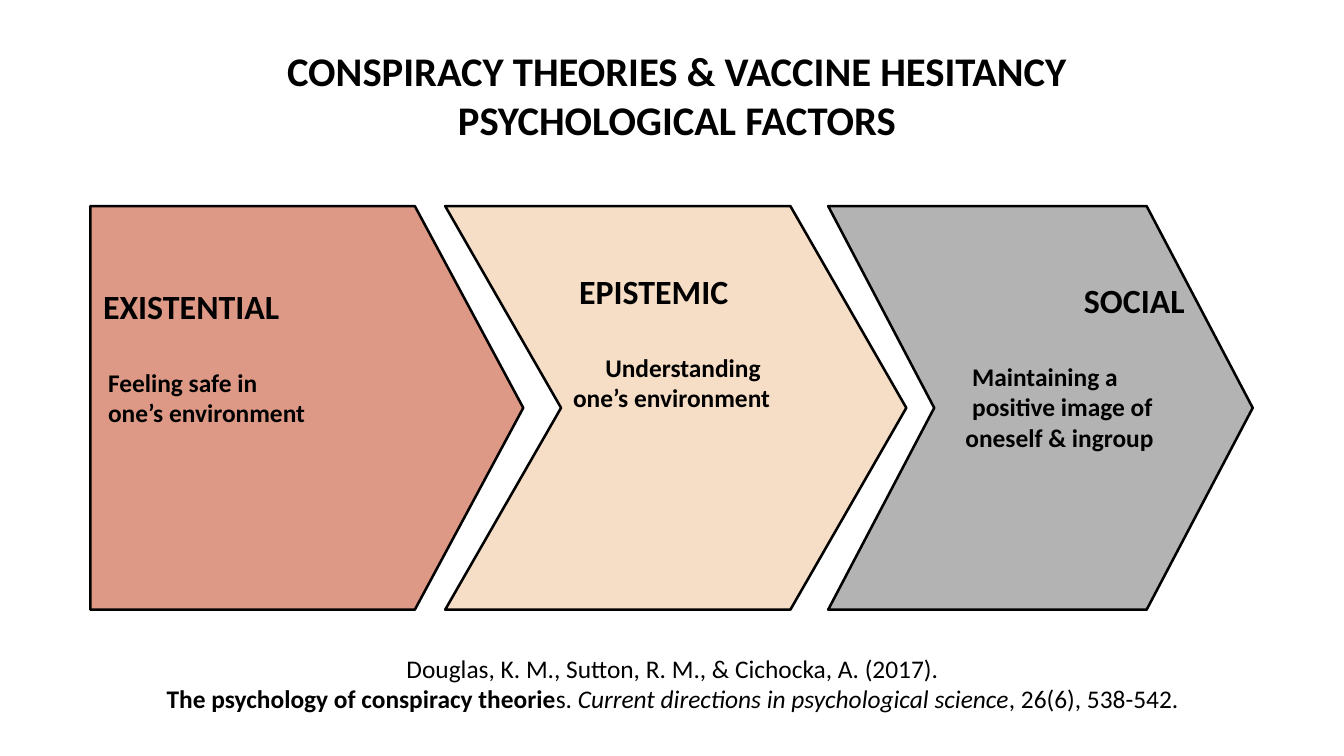
"""Build a slide on the psychological factors behind vaccine hesitancy."""
from pptx import Presentation
from pptx.dml.color import RGBColor
from pptx.enum.text import MSO_ANCHOR, MSO_AUTO_SIZE, PP_ALIGN
from pptx.util import Pt

COLORS = {
    "black": "000000",
    "existential": "DE9986",
    "epistemic": "F6DDC5",
    "social": "B3B3B3",
}
TOP, HEIGHT = 121.7, 238.3


def rgb(name):
    return RGBColor.from_string(COLORS[name])


def style(p, size, bold):
    for r in p.runs:
        r.font.name = "Calibri"
        r.font.size = Pt(size)
        r.font.bold = bold
        r.font.color.rgb = rgb("black")


prs = Presentation()
prs.slide_width, prs.slide_height = Pt(793.4), Pt(446.4)
s = prs.slides.add_slide(prs.slide_layouts[5])

title = s.shapes.title
title.left, title.top, title.width, title.height = Pt(14.4), Pt(6.5), Pt(770.4), Pt(98.6)
tf = title.text_frame
tf.text = "CONSPIRACY THEORIES & VACCINE HESITANCY\nPSYCHOLOGICAL FACTORS"
tf.auto_size = MSO_AUTO_SIZE.NONE
tf.vertical_anchor = MSO_ANCHOR.MIDDLE
tf.margin_left = tf.margin_right = tf.margin_top = tf.margin_bottom = 0
for p in tf.paragraphs:
    p.alignment = PP_ALIGN.CENTER
    p.space_before = Pt(0)
    style(p, 24, True)

# Each entry: colour, left, width, point depth, notch depth, text top, (indent, line) pairs
factors = [
    ("existential", 53.3, 255.6, 64, 0, 47,
     [(7.5, "EXISTENTIAL"), (10.5, "Feeling safe in"), (10.5, "one’s environment")]),
    ("epistemic", 262.8, 272.2, 68.4, 68.4, 38,
     [(79, "EPISTEMIC"), (94.5, "Understanding"), (75.5, "one’s environment")]),
    ("social", 488.9, 250.6, 62.6, 62.6, 43.5,
     [(151, "SOCIAL"), (85, "Maintaining a"), (85, "positive image of"),
      (81, "oneself & ingroup")]),
]
for name, left, width, depth, notch, text_top, lines in factors:
    right, middle, bottom = left + width, TOP + HEIGHT / 2, TOP + HEIGHT
    outline = [(right - depth, TOP), (right, middle), (right - depth, bottom), (left, bottom)]
    if notch:
        outline.append((left + notch, middle))
    builder = s.shapes.build_freeform(Pt(left), Pt(TOP))
    builder.add_line_segments([(Pt(x), Pt(y)) for x, y in outline], close=True)
    sp = builder.convert_to_shape()
    sp.shadow.inherit = False
    sp.fill.solid()
    sp.fill.fore_color.rgb = rgb(name)
    sp.line.color.rgb = rgb("black")
    sp.line.width = Pt(1.5)
    tf = sp.text_frame
    tf.word_wrap = True
    tf.vertical_anchor = MSO_ANCHOR.TOP
    tf.margin_left = tf.margin_right = tf.margin_bottom = 0
    tf.margin_top = Pt(text_top)
    tf.text = "\n".join(line for _, line in lines)
    for i, (p, (indent, _)) in enumerate(zip(tf.paragraphs, lines)):
        p.alignment = PP_ALIGN.LEFT
        p._p.get_or_add_pPr().set("marL", str(Pt(indent)))
        style(p, 15 if i else 20, True)
    tf.paragraphs[0].space_after = Pt(24)

source = s.shapes.add_textbox(Pt(21.6), Pt(360), Pt(751), Pt(79.2))
tf = source.text_frame
tf.word_wrap = True
tf.margin_top = Pt(25.6)
tf.text = "Douglas, K. M., Sutton, R. M., & Cichocka, A. (2017)."
citation = tf.add_paragraph()
for text in ("The psychology of conspiracy theorie", "s. ",
             "Current directions in psychological science", ", 26(6), 538-542."):
    citation.add_run().text = text
for p in tf.paragraphs:
    p.alignment = PP_ALIGN.CENTER
    style(p, 15, False)
citation.runs[0].font.bold = True
citation.runs[2].font.italic = True

prs.save("out.pptx")
